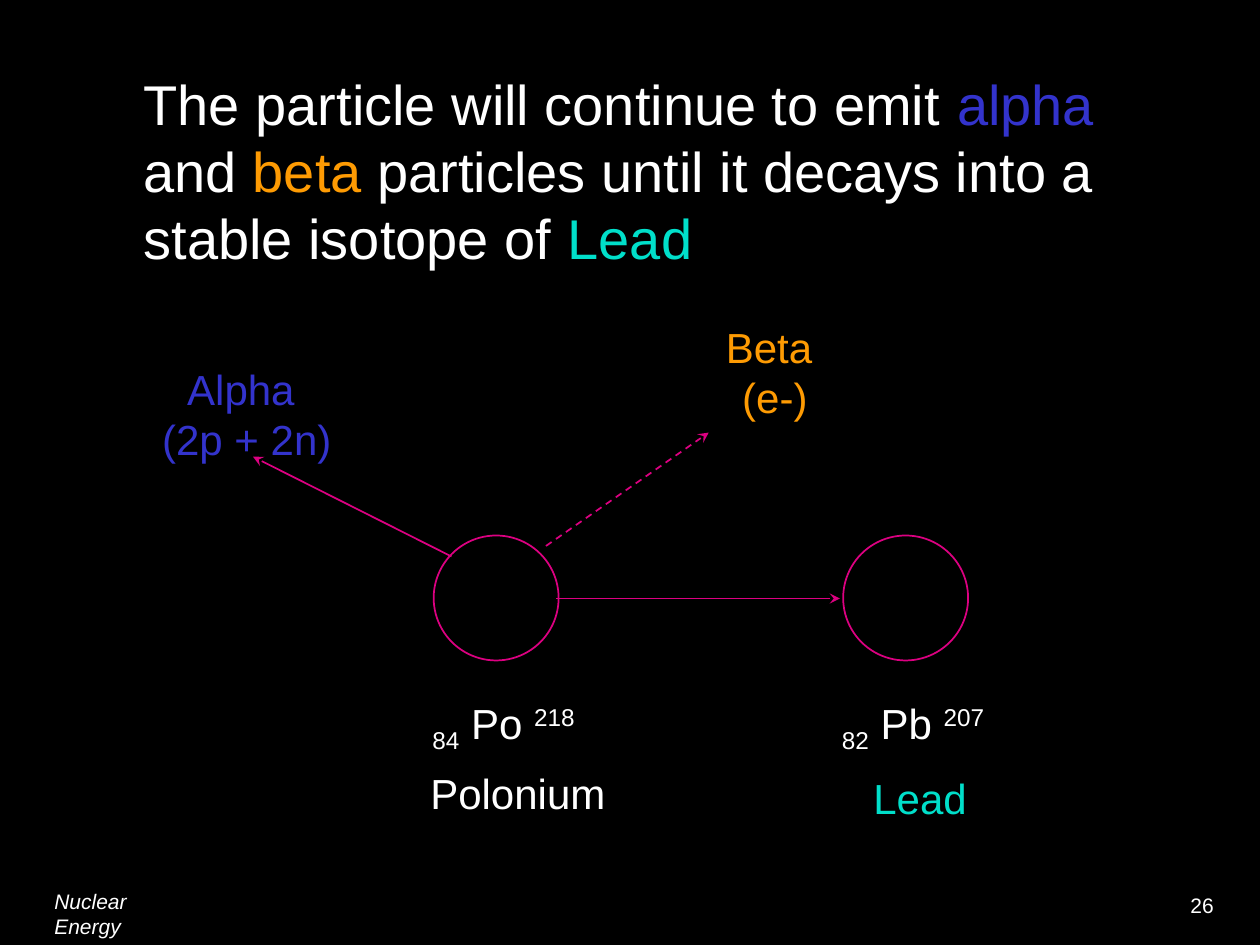
"""Slide on the decay of polonium into lead by alpha and beta emission."""
from lxml.etree import SubElement
from pptx import Presentation
from pptx.dml.color import RGBColor
from pptx.enum.dml import MSO_LINE
from pptx.enum.shapes import MSO_CONNECTOR, MSO_SHAPE
from pptx.enum.text import PP_ALIGN
from pptx.oxml.ns import qn
from pptx.util import Inches, Pt

INK = {
    "black": "000000", "white": "FFFFFF", "alpha": "3333CC",
    "beta": "FE9B03", "lead": "00DFCA", "pink": "DC0081",
}
UNIT = Inches(1) / 12

deck = Presentation()
deck.slide_width, deck.slide_height = Inches(10), Inches(7.5)
slide = deck.slides.add_slide(deck.slide_layouts[6])
slide.background.fill.solid()
slide.background.fill.fore_color.rgb = RGBColor.from_string(INK["black"])


def grid(*cells):
    return [round(cell * UNIT) for cell in cells]


def write(box, lines, size=24, align=PP_ALIGN.LEFT):
    frame = slide.shapes.add_textbox(*grid(*box)).text_frame
    frame.word_wrap = True
    frame.text = "\n".join("" for line in lines)
    for para, line in zip(frame.paragraphs, lines):
        para.alignment = align
        for text, ink, base in line:
            run = para.add_run()
            run.text = text
            run.font.name, run.font.size = "Arial", Pt(size)
            run.font.color.rgb = RGBColor.from_string(INK[ink])
            if base:
                run.font._element.set("baseline", str(base * 1000))
    return frame


write((112.2, 84.4, 6, 3.6), [[("26", "white", 0)]], 12)
foot = write((4, 84, 13, 6), [[("Nuclear Energy", "white", 0)]], 12)
foot.paragraphs[0].runs[0].font.italic = True

title = write((12.5, 6, 99.5, 22), [[
    ("The particle will continue to emit ", "white", 0),
    ("alpha", "alpha", 0),
    (" and ", "white", 0),
    ("beta", "beta", 0),
    (" particles until it decays into a stable isotope of ", "white", 0),
    ("Lead", "lead", 0),
]], 32)
title.paragraphs[0].space_before = Pt(6.4)

atoms = [("84", " Po ", "218"), ("82", " Pb ", "207")]
for col, (low, name, high) in enumerate(atoms):
    left = 39 * col
    ring = slide.shapes.add_shape(
        MSO_SHAPE.OVAL, *grid(41.3 + left, 51, 11.9, 11.9))
    ring.shadow.inherit = False
    ring.fill.background()
    ring.line.color.rgb = RGBColor.from_string(INK["pink"])
    ring.line.width = Pt(1)
    write((40 + left, 65.8, 18, 6), [[
        (low, "white", -25), (name, "white", 0), (high, "white", 30)]])

write((39.8, 72.5, 20, 6), [[("Polonium", "white", 0)]])
write((82, 73, 12, 6), [[("Lead", "lead", 0)]])

rays = [
    ("alpha", (4, 34, 39, 10.8), ("Alpha ", "(2p + 2n)")),
    ("beta", (57.7, 30, 32.2, 10.8), ("Beta ", "(e-)")),
]
for ink, box, words in rays:
    write(box, [[(word, ink, 0)] for word in words], align=PP_ALIGN.CENTER)

paths = [
    ((43, 53, 24.1, 43.5), False),
    ((53, 57, 80, 57), False),
    ((52, 52, 67.5, 41.2), True),
]
for ends, dashed in paths:
    arrow = slide.shapes.add_connector(MSO_CONNECTOR.STRAIGHT, *grid(*ends))
    arrow.line.color.rgb = RGBColor.from_string(INK["pink"])
    arrow.line.width = Pt(1)
    if dashed:
        arrow.line.dash_style = MSO_LINE.DASH
    SubElement(arrow.line._get_or_add_ln(), qn("a:tailEnd"), type="stealth")
    SubElement(arrow._element.spPr, qn("a:effectLst"))

deck.save("out.pptx")
